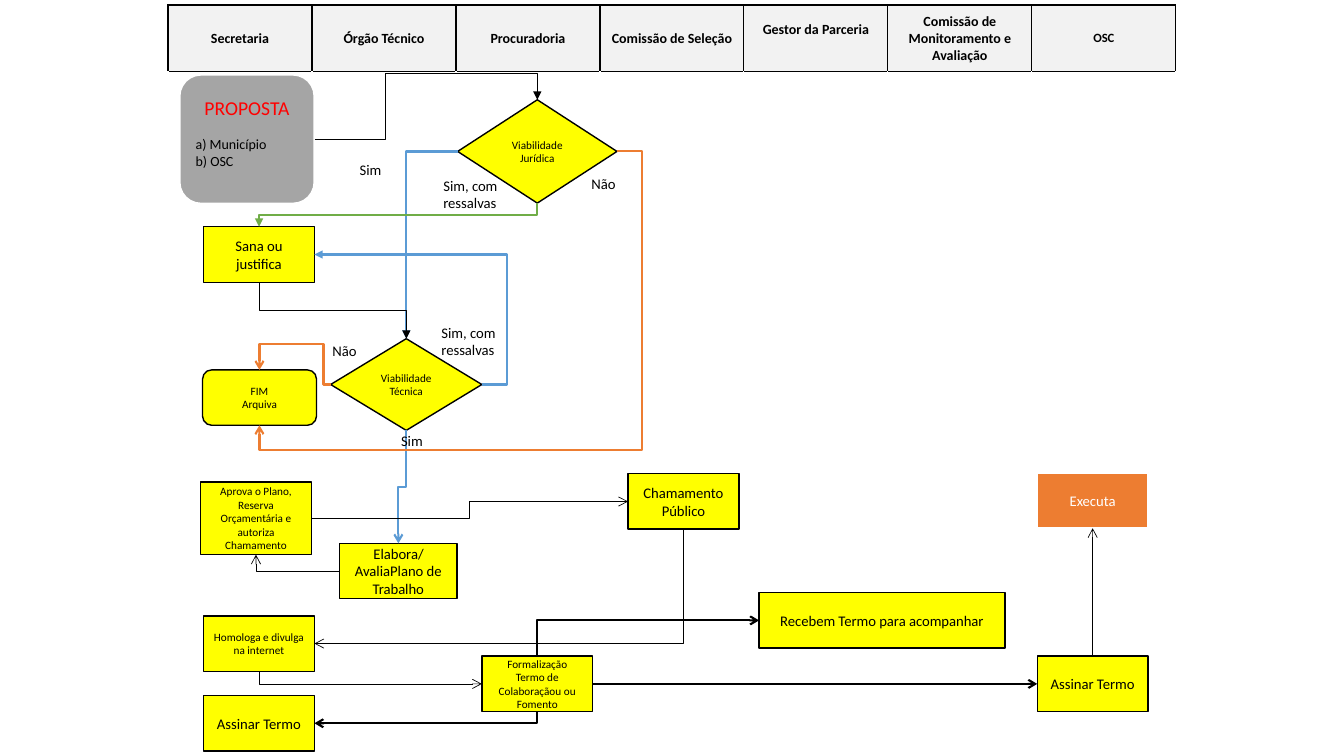
from dataclasses import dataclass

from lxml import etree
from pptx import Presentation
from pptx.dml.color import RGBColor
from pptx.enum.shapes import MSO_CONNECTOR, MSO_SHAPE
from pptx.enum.text import MSO_ANCHOR, PP_ALIGN
from pptx.oxml.ns import qn
from pptx.util import Pt

RECT = MSO_SHAPE.RECTANGLE
ROUND = MSO_SHAPE.ROUNDED_RECTANGLE
DECISION = MSO_SHAPE.FLOWCHART_DECISION
ELBOW = MSO_CONNECTOR.ELBOW
STRAIGHT = MSO_CONNECTOR.STRAIGHT
MIDDLE = MSO_ANCHOR.MIDDLE
LEFT, CENTER = PP_ALIGN.LEFT, PP_ALIGN.CENTER
TOP_SIDE, LEFT_SIDE, BOTTOM_SIDE, RIGHT_SIDE = range(4)


@dataclass(frozen=True)
class Theme:
    font: str = "Calibri"
    black: str = "000000"
    white: str = "FFFFFF"
    header: str = "F2F2F2"
    yellow: str = "FFFF00"
    gray: str = "A5A5A5"
    red: str = "FF0000"
    blue: str = "5B9BD5"
    orange: str = "ED7D31"
    green: str = "70AD47"
    title: float = 14
    body: float = 10.5
    head: float = 10
    head_small: float = 9
    small: float = 8
    thin: float = 0.5
    border: float = 1
    thick: float = 1.5


T = Theme()


def rgb(value):
    return RGBColor.from_string(value)


def write(tf, text, size=T.body, color=T.black, bold=False, align=CENTER,
          before=0, append=False):
    for i, line in enumerate(text.split("\n")):
        p = tf.add_paragraph() if i or append else tf.paragraphs[0]
        p.alignment = align
        if before and not i:
            p.space_before = Pt(before)
        r = p.add_run()
        r.text = line
        r.font.name, r.font.size, r.font.bold = T.font, Pt(size), bold
        r.font.color.rgb = rgb(color)


def border_cell(cell, sides):
    pr = cell._tc.get_or_add_tcPr()
    for i, side in enumerate(sides):
        ln = etree.Element(qn(f"a:{side}"), w=str(Pt(T.border)))
        fill = etree.SubElement(ln, qn("a:solidFill"))
        etree.SubElement(fill, qn("a:srgbClr"), val=T.black)
        pr.insert(i, ln)


def add_lanes(slide, x, y, w):
    names = ["Secretaria", "Órgão Técnico", "Procuradoria", "Comissão de Seleção",
             "Gestor da Parceria", "Comissão de Monitoramento e Avaliação", "OSC"]
    heights = [47.5, 59, 219.6, 52.6, 66.2, 88.6]
    table = slide.shapes.add_table(len(heights), len(names), Pt(x), Pt(y),
                                   Pt(w), Pt(sum(heights))).table
    for col in table.columns:
        col.width = Pt(w / len(names))
    for i, (row, height) in enumerate(zip(table.rows, heights)):
        row.height = Pt(height)
        for cell in row.cells:
            cell.fill.solid()
            cell.fill.fore_color.rgb = rgb(T.white if i else T.header)
            if i < 2:
                border_cell(cell, ["lnT"] if i else ["lnL", "lnR", "lnT", "lnB"])
    for cell, name in zip(table.rows[0].cells, names):
        cell.vertical_anchor = MIDDLE
        write(cell.text_frame, name, bold=True,
              size=T.head_small if name == "OSC" else T.head)
    table.cell(0, 4).margin_bottom = Pt(15.6)


def add_node(slide, x, y, w=79.2, h=39.6, text="", kind=RECT, size=T.body,
             fill=T.yellow, line=T.black, color=T.black, weight=T.border):
    s = slide.shapes.add_shape(kind, Pt(x), Pt(y), Pt(w), Pt(h))
    s.shadow.inherit = False
    s.fill.solid()
    s.fill.fore_color.rgb = rgb(fill)
    s.line.color.rgb = rgb(line)
    s.line.width = Pt(weight)
    tf = s.text_frame
    tf.word_wrap = True
    tf.vertical_anchor = MIDDLE
    write(tf, text, size=size, color=color)
    return s


def bend(c, start, end, adj):
    x1, y1, x2, y2 = c.begin_x, c.begin_y, c.end_x, c.end_y
    w, h = abs(x2 - x1), abs(y2 - y1)
    flip_h, flip_v, angle = x2 < x1, y2 < y1, 0
    if start in (TOP_SIDE, BOTTOM_SIDE):
        down, right = y2 > y1, x2 > x1
        angle = 270 if down and right else 90
        flip_h, flip_v = right, right and not down
        w, h = h, w
    c.left, c.top = (x1 + x2 - w) // 2, (y1 + y2 - h) // 2
    c.width, c.height, c.rotation = w, h, angle
    c._element.flipH, c._element.flipV = flip_h, flip_v
    parts = 3 if start % 2 == end % 2 else 4 if adj else 2
    geom = c._element.spPr.find(qn("a:prstGeom"))
    geom.set("prst", f"bentConnector{parts}")
    guides = geom.find(qn("a:avLst"))
    for i, ratio in enumerate(adj, 1):
        name = "adj1" if parts == 3 else f"adj{i}"
        etree.SubElement(guides, qn("a:gd"), name=name,
                         fmla=f"val {round(ratio * 100000)}")


def add_route(slide, source, start, target, end, color=T.black, weight=T.thin,
              head="arrow", adj=(), kind=ELBOW):
    c = slide.shapes.add_connector(kind, 0, 0, 0, 0)
    c.begin_connect(source, start)
    c.end_connect(target, end)
    if kind == ELBOW:
        bend(c, start, end, adj)
    c.line.color.rgb = rgb(color)
    c.line.width = Pt(weight)
    etree.SubElement(c.line._get_or_add_ln(), qn("a:tailEnd"), type=head)
    etree.SubElement(c._element.spPr, qn("a:effectLst"))


def add_label(slide, x, y, text, w=36, h=20.2):
    tf = slide.shapes.add_textbox(Pt(x), Pt(y), Pt(w), Pt(h)).text_frame
    tf.word_wrap = True
    write(tf, text, align=LEFT)


def add_flow(slide, x, y):
    def node(dx, dy, text, **fmt):
        return add_node(slide, x + dx, y + dy, text=text, **fmt)

    def route(*ends, **fmt):
        add_route(slide, *ends, **fmt)

    proposta = node(8.2, 49.7, "PROPOSTA", w=96.5, h=92.2, kind=ROUND, size=T.title,
                    fill=T.gray, line=T.white, color=T.red, weight=T.thick)
    tf = proposta.text_frame
    tf.margin_bottom = Pt(13)
    write(tf, "a) Município\nb) OSC", size=T.head, align=LEFT, before=12, append=True)
    juridica = node(206.9, 67.7, "Viabilidade Jurídica", w=113.8, h=73.8,
                    kind=DECISION, size=T.small)
    sana = node(25.4, 158.4, "Sana ou justifica")
    tecnica = node(116.2, 238.3, "Viabilidade Técnica", w=108, h=65.5,
                   kind=DECISION, size=T.small)
    fim = node(24.7, 260.6, "FIM\nArquiva", w=81.4, kind=ROUND, size=T.small)
    aprova = node(23.3, 340.6, "Aprova o Plano, Reserva Orçamentária e autoriza Chamamento",
                  h=52, size=T.small)
    chamamento = node(328.6, 334.8, "Chamamento\nPúblico")
    elabora = node(122.6, 384.5, "Elabora/AvaliaPlano de Trabalho", w=83.9)
    homologa = node(25.4, 436.3, "Homologa e divulga na internet", size=T.small)
    termo = node(224.2, 465.1, "Formalização Termo de Colaboraçãou ou Fomento", size=T.small)
    assina_secretaria = node(25.4, 493.2, "Assinar Termo")
    recebem = node(422.2, 419.8, "Recebem Termo para acompanhar", w=175.7)
    assina_osc = node(620.9, 465.1, "Assinar Termo")
    executa = node(620.9, 334.1, "Executa", fill=T.orange, line=T.white,
                   color=T.white, weight=T.thick)

    blue = dict(color=T.blue, weight=T.thick)
    orange = dict(color=T.orange, weight=T.thick)
    route(tecnica, BOTTOM_SIDE, elabora, TOP_SIDE, **blue)
    route(juridica, RIGHT_SIDE, fim, BOTTOM_SIDE, adj=(-0.07, 1.09), **orange)
    route(juridica, LEFT_SIDE, tecnica, TOP_SIDE, head="triangle", **blue)
    route(tecnica, LEFT_SIDE, fim, TOP_SIDE, adj=(0.1, 2.74), **orange)
    route(proposta, RIGHT_SIDE, juridica, TOP_SIDE, head="triangle", adj=(0.32, 1.66))
    route(juridica, BOTTOM_SIDE, sana, TOP_SIDE, color=T.green, weight=T.thick,
          head="triangle")
    route(sana, BOTTOM_SIDE, tecnica, TOP_SIDE, head="triangle")
    route(tecnica, RIGHT_SIDE, sana, RIGHT_SIDE, head="triangle", adj=(-0.15,), **blue)
    route(elabora, LEFT_SIDE, aprova, BOTTOM_SIDE)
    route(aprova, RIGHT_SIDE, chamamento, LEFT_SIDE)
    route(chamamento, BOTTOM_SIDE, homologa, RIGHT_SIDE)
    route(homologa, BOTTOM_SIDE, termo, LEFT_SIDE)
    route(termo, RIGHT_SIDE, assina_osc, LEFT_SIDE, weight=T.thick, kind=STRAIGHT)
    route(termo, BOTTOM_SIDE, assina_secretaria, RIGHT_SIDE, weight=T.thick)
    route(termo, TOP_SIDE, recebem, LEFT_SIDE, weight=T.thick)
    route(assina_osc, TOP_SIDE, executa, BOTTOM_SIDE, kind=STRAIGHT)

    for dx, dy, text in [(129.8, 108, "Sim"), (159.4, 301, "Sim"),
                         (295.4, 117.4, "Não"), (110.4, 236.9, "Não")]:
        add_label(slide, x + dx, y + dy, text)
    for dx, dy in [(189.6, 118.8), (188.2, 223.9)]:
        add_label(slide, x + dx, y + dy, "Sim, com ressalvas", w=62, h=32.4)


def main():
    prs = Presentation()
    prs.slide_width, prs.slide_height = Pt(960), Pt(540)
    slide = prs.slides.add_slide(prs.slide_layouts[6])
    add_lanes(slide, 120, 3.6, 720)
    add_flow(slide, 120, 3.6)
    prs.save("out.pptx")


if __name__ == "__main__":
    main()
